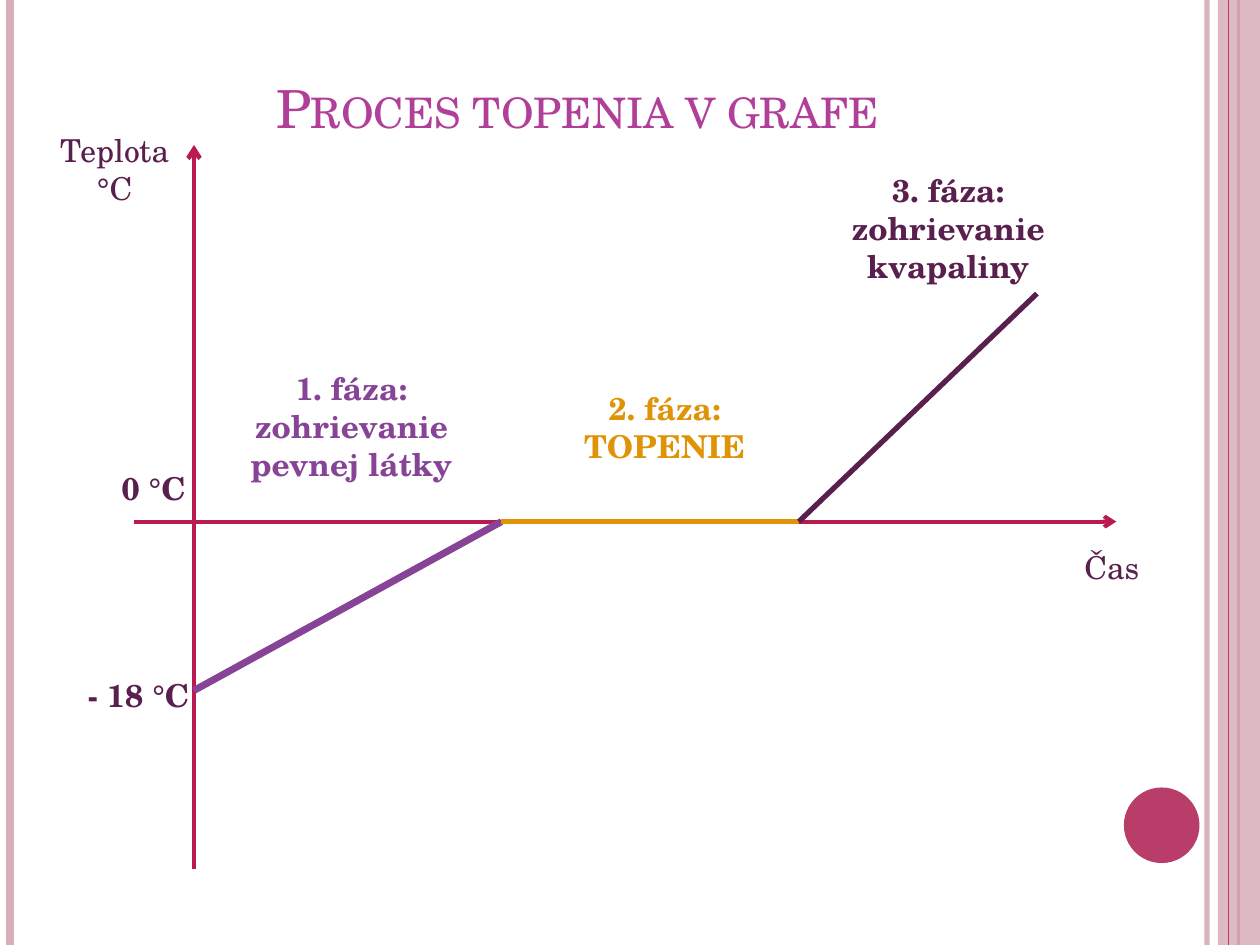
import pptx
import pptx.util
import pptx.dml.color
import pptx.enum.shapes
import pptx.enum.text
import pptx.oxml
import pptx.oxml.ns

Pt = pptx.util.Pt
FONT = "TeX Gyre Schola"
COLOURS = {
    "pale": "D8AFB9",
    "rose": "B83D68",
    "title": "B13F9A",
    "axis": "B81A51",
    "plum": "591F4D",
    "violet": "874396",
    "amber": "DF9307",
}


def set_colour(fill, name, alpha=100):
    fill.solid()
    fill.fore_color.rgb = pptx.dml.color.RGBColor.from_string(COLOURS[name])
    if alpha < 100:
        colour = fill._xPr.find(".//" + pptx.oxml.ns.qn("a:srgbClr"))
        colour.append(pptx.oxml.parse_xml(
            f'<a:alpha {pptx.oxml.ns.nsdecls("a")} val="{alpha * 1000}"/>'))


def add_line(start, end, colour, width, alpha=100, arrow=False):
    line = page.shapes.add_connector(
        pptx.enum.shapes.MSO_CONNECTOR.STRAIGHT,
        Pt(start[0]), Pt(start[1]), Pt(end[0]), Pt(end[1]))
    line.line.width = Pt(width)
    set_colour(line.line.fill, colour, alpha)
    namespace = pptx.oxml.ns.nsdecls("a")
    if arrow:
        line.line._get_or_add_ln().append(
            pptx.oxml.parse_xml(f'<a:tailEnd {namespace} type="arrow"/>'))
    line._element.spPr.append(pptx.oxml.parse_xml(f"<a:effectLst {namespace}/>"))


deck = pptx.Presentation()
deck.slide_width, deck.slide_height = Pt(720), Pt(540)
page = deck.slides.add_slide(deck.slide_layouts[5])

# Decorative stripes, side band and circle
for x, colour, width, alpha in [
    (689.76, "pale", 3, 93),
    (5.76, "pale", 4.5, 100),
    (707.76, "rose", 1.5, 100),
]:
    add_line((x, 0), (x, 540), colour, width, alpha)

shapes = pptx.enum.shapes.MSO_SHAPE
for kind, left, top, width, height, colour, alpha in [
    (shapes.RECTANGLE, 696, 0, 24, 540, "pale", 87),
    (shapes.OVAL, 642.24, 450, 43.2, 43.2, "rose", 100),
]:
    shape = page.shapes.add_shape(kind, Pt(left), Pt(top), Pt(width), Pt(height))
    shape.shadow.inherit = False
    shape.line.fill.background()
    set_colour(shape.fill, colour, alpha)
add_line((702, 0), (702, 540), "rose", 0.75)

# Title
title = page.shapes.title
title.left, title.top, title.width, title.height = Pt(36), Pt(21.6), Pt(588), Pt(61.2)
title.text_frame.text = "Proces topenia v grafe"
title.text_frame.vertical_anchor = pptx.enum.text.MSO_ANCHOR.BOTTOM
para = title.text_frame.paragraphs[0]
para.alignment = pptx.enum.text.PP_ALIGN.CENTER
para.font.name, para.font.size = FONT, Pt(30)
para.font._element.set("cap", "small")
set_colour(para.font.fill, "title")

# Axes
axis_x, zero_y = 110.88, 298.08
add_line((axis_x, 496.8), (axis_x, 82.8), "axis", 2.5, arrow=True)
add_line((76.32, zero_y), (637.92, zero_y), "axis", 2.25, arrow=True)

# Temperature curve: heating the solid, melting, heating the liquid
points = [(axis_x, 394.56), (286.56, zero_y), (456.48, zero_y), (592.56, 167.76)]
phases = [("violet", 4), ("amber", 3.25), ("plum", 3)]
for start, end, (colour, width) in zip(points, points[1:], phases):
    add_line(start, end, colour, width)

# Labels for axes, temperatures and phases
for text, left, top, width, height, colour, bold in [
    ("Teplota °C", 20.16, 71.28, 90.72, 51.12, "plum", False),
    ("Čas ", 592.56, 309.6, 90.72, 28.8, "plum", False),
    ("0 °C", 54, 264.24, 67.68, 28.8, "plum", True),
    ("- 18 °C", 36.72, 383.04, 84.96, 28.8, "plum", True),
    ("1. fáza: zohrievanie pevnej látky", 115.92, 207.36, 169.92, 72.72, "violet", True),
    ("2. fáza: TOPENIE", 320.4, 218.88, 118.8, 51.12, "amber", True),
    ("3. fáza: zohrievanie kvapaliny", 468, 94.32, 147.6, 72.72, "plum", True),
]:
    box = page.shapes.add_textbox(Pt(left), Pt(top), Pt(width), Pt(height))
    box.text_frame.word_wrap = True
    box.text_frame.text = text
    para = box.text_frame.paragraphs[0]
    para.alignment = pptx.enum.text.PP_ALIGN.CENTER
    para.font.name, para.font.size, para.font.bold = FONT, Pt(18), bold
    set_colour(para.font.fill, colour)

deck.save("out.pptx")
